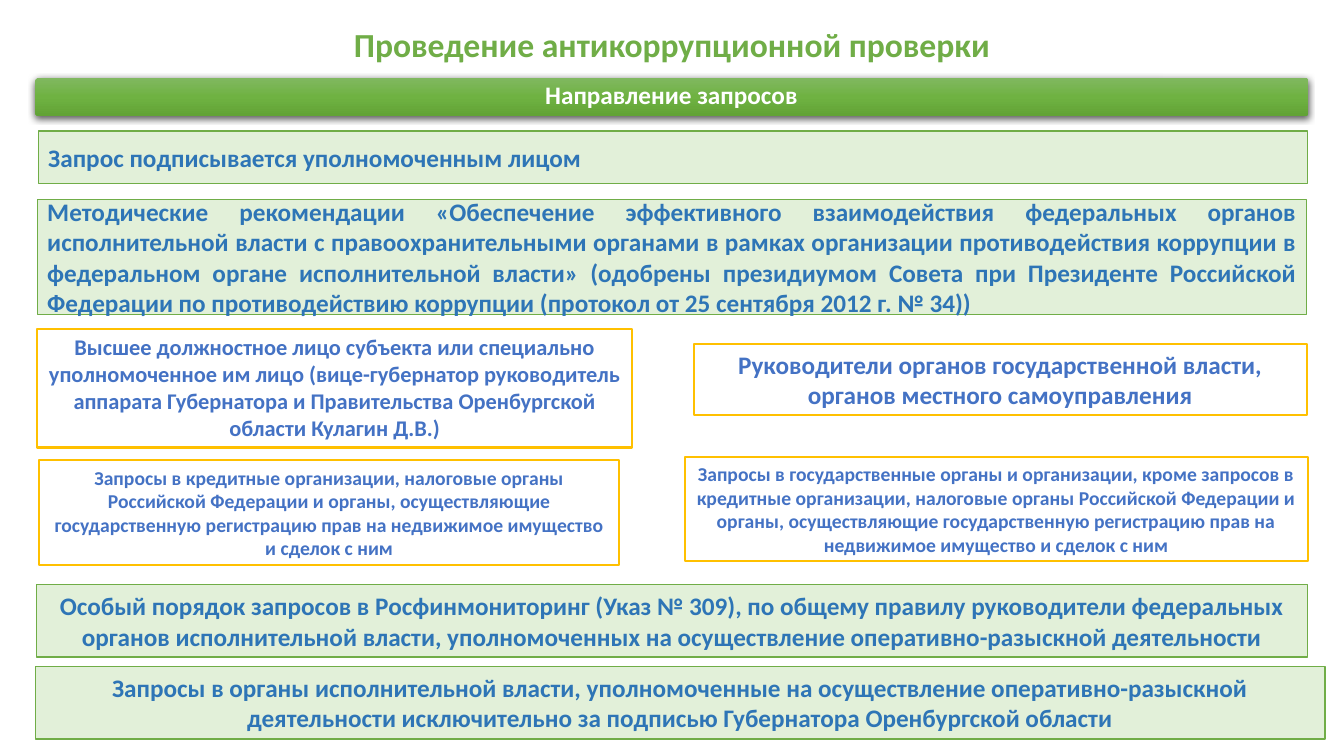
from copy import deepcopy

from lxml import etree
from pptx import Presentation
from pptx.dml.color import RGBColor
from pptx.enum.shapes import MSO_SHAPE
from pptx.enum.text import MSO_ANCHOR, MSO_AUTO_SIZE, PP_ALIGN
from pptx.oxml.ns import qn
from pptx.util import Inches, Pt

RECT, ROUND_RECT = MSO_SHAPE.RECTANGLE, MSO_SHAPE.ROUNDED_RECTANGLE
TOP, MIDDLE = MSO_ANCHOR.TOP, MSO_ANCHOR.MIDDLE
CENTER, JUSTIFY = PP_ALIGN.CENTER, PP_ALIGN.JUSTIFY
GROW = MSO_AUTO_SIZE.SHAPE_TO_FIT_TEXT

COLORS = {
    "green": "70AD47", "pale_green": "E2F0D9", "blue": "2E75B6",
    "indigo": "4472C4", "amber": "FFC000", "white": "FFFFFF",
    "bar_top": "81B861", "bar_middle": "6FB242", "bar_bottom": "62A336",
}


def color(name):
    return RGBColor.from_string(COLORS[name])


class SlideBuilder:
    font = "Calibri"

    def __init__(self, slide):
        self.slide = slide

    def set_text(self, sp, text, size, text_color, align=CENTER, anchor=MIDDLE, grow=False):
        tf = sp.text_frame
        tf.word_wrap = True
        tf.vertical_anchor = anchor
        if grow:
            tf.auto_size = GROW
        tf.text = text
        p = tf.paragraphs[0]
        p.alignment = align
        font = p.runs[0].font
        font.name, font.size, font.bold = self.font, Pt(size), True
        font.color.rgb = color(text_color)
        return p

    def label(self, box, text, size, text_color, **style):
        sp = self.slide.shapes.add_textbox(*map(Inches, box))
        return self.set_text(sp, text, size, text_color, **style)

    def panel(self, box, text, size, fill, line, width, text_color, **style):
        sp = self.slide.shapes.add_shape(RECT, *map(Inches, box))
        sp.shadow.inherit = False
        sp.fill.solid()
        sp.fill.fore_color.rgb = color(fill)
        sp.line.color.rgb = color(line)
        sp.line.width = Pt(width)
        self.set_text(sp, text, size, text_color, **style)

    def green_panel(self, box, text, align=CENTER):
        self.panel(box, text, 18, "pale_green", "green", 1, "blue", align=align)

    def amber_panel(self, box, text, size, anchor=MIDDLE):
        self.panel(box, text, size, "white", "amber", 1.5, "indigo",
                   anchor=anchor, grow=True)

    def gradient_bar(self, box, stop_colors):
        sp = self.slide.shapes.add_shape(ROUND_RECT, *map(Inches, box))
        sp.adjustments[0] = 0.1
        sp.line.fill.background()
        # Evenly spaced stops, running downwards
        sp.fill.gradient()
        sp.fill.gradient_angle = 270
        spPr = sp._element.spPr
        stops = spPr.find(".//" + qn("a:gsLst"))
        stops.insert(1, deepcopy(stops[0]))
        for i, (stop, name) in enumerate(zip(sp.fill.gradient_stops, stop_colors)):
            stop.position = i / (len(stop_colors) - 1)
            stop.color.rgb = color(name)
        # Soft shadow below
        sp.shadow.inherit = False
        shadow = etree.SubElement(
            spPr.find(qn("a:effectLst")), qn("a:outerShdw"),
            blurRad=str(Pt(4.5)), dist=str(Pt(1.5)), dir="5400000",
            algn="ctr", rotWithShape="0")
        black = etree.SubElement(shadow, qn("a:srgbClr"), val="000000")
        etree.SubElement(black, qn("a:alpha"), val="63000")


def main():
    prs = Presentation()
    prs.slide_width, prs.slide_height = Inches(13.33), Inches(7.5)
    s = SlideBuilder(prs.slides.add_slide(prs.slide_layouts[6]))

    # Title and heading bar
    s.label((0.61, 0.19, 12.11, 0.5), "Проведение антикоррупционной проверки",
            24, "green", anchor=TOP, grow=True)
    s.gradient_bar((0.35, 0.77, 12.63, 0.38), ("bar_top", "bar_middle", "bar_bottom"))
    heading = s.label((0.38, 0.78, 12.56, 0.36), "Направление запросов", 18, "white")
    heading.line_spacing = 0.9

    # General rules
    s.green_panel((0.38, 1.3, 12.59, 0.52),
                  "Запрос подписывается уполномоченным лицом", JUSTIFY)
    s.green_panel((0.37, 1.98, 12.59, 1.14),
                  "Методические рекомендации «Обеспечение эффективного взаимодействия "
                  "федеральных органов исполнительной власти с правоохранительными органами "
                  "в рамках организации противодействия коррупции в федеральном органе "
                  "исполнительной власти» (одобрены президиумом Совета при Президенте "
                  "Российской Федерации по противодействию коррупции (протокол от "
                  "25 сентября 2012 г. № 34))", JUSTIFY)

    # Who signs, and which requests
    s.amber_panel((0.37, 3.26, 5.9, 1.18),
                  "Высшее должностное лицо субъекта или специально уполномоченное им лицо "
                  "(вице-губернатор руководитель аппарата Губернатора и Правительства "
                  "Оренбургской области Кулагин Д.В.)", 16, TOP)
    s.amber_panel((6.88, 3.41, 6.08, 0.71),
                  "Руководители органов государственной власти, "
                  "органов местного самоуправления", 18)
    s.amber_panel((0.39, 4.56, 5.75, 1.05),
                  "Запросы в кредитные организации, налоговые органы Российской Федерации "
                  "и органы, осуществляющие государственную регистрацию прав на недвижимое "
                  "имущество и сделок с ним", 14)
    s.amber_panel((6.79, 4.53, 6.18, 1.04),
                  "Запросы в государственные органы и организации, кроме запросов в "
                  "кредитные организации, налоговые органы Российской Федерации и органы, "
                  "осуществляющие государственную регистрацию прав на недвижимое имущество "
                  "и сделок с ним", 14)

    # Special procedure
    s.green_panel((0.36, 5.8, 12.61, 0.72),
                  "Особый порядок запросов в Росфинмониторинг (Указ № 309), по общему "
                  "правилу руководители федеральных органов исполнительной власти, "
                  "уполномоченных на осуществление оперативно-разыскной деятельности")
    s.green_panel((0.35, 6.61, 12.79, 0.72),
                  "Запросы в органы исполнительной власти, уполномоченные на осуществление "
                  "оперативно-разыскной деятельности исключительно за подписью Губернатора "
                  "Оренбургской области")

    prs.save("out.pptx")


if __name__ == "__main__":
    main()
